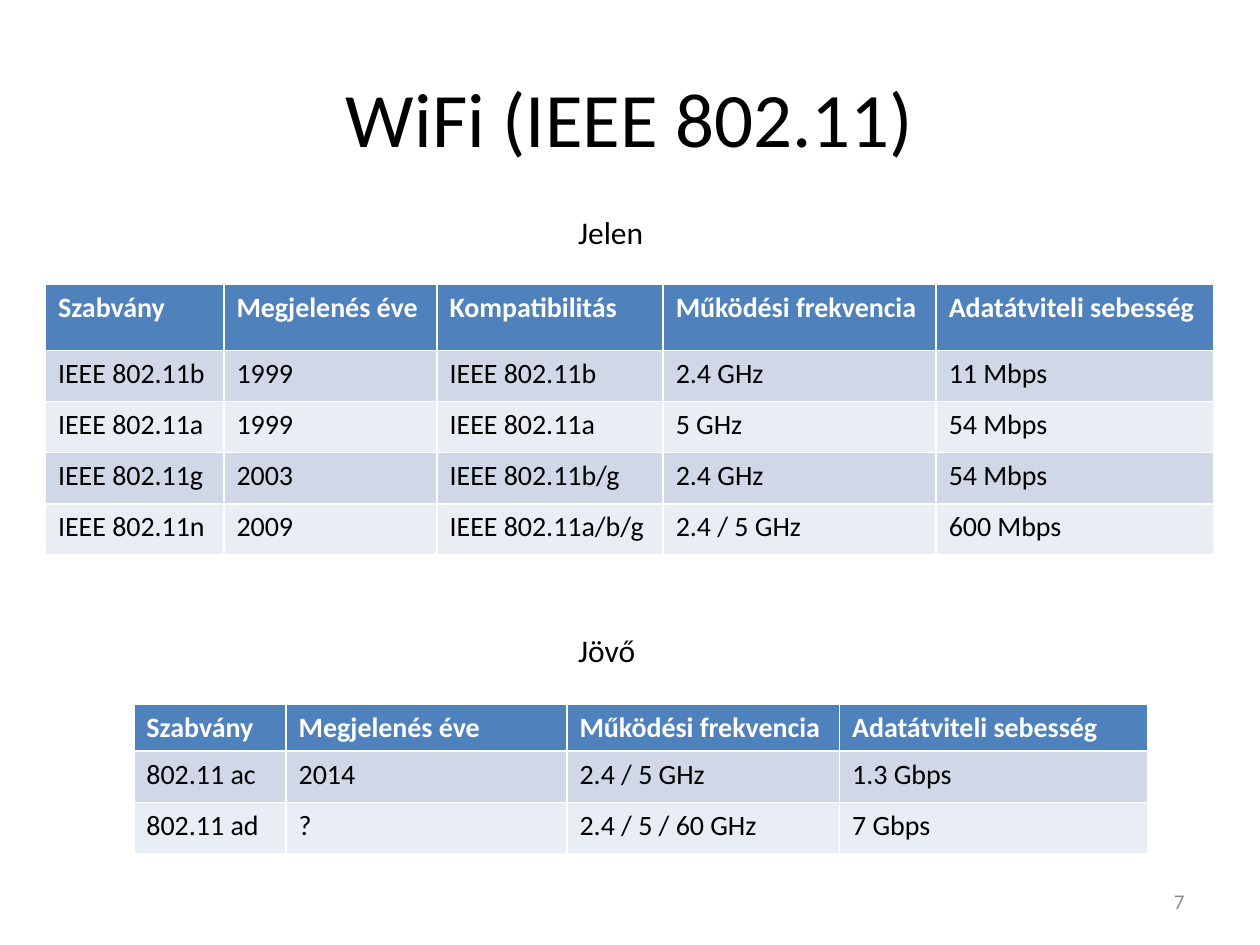
from pptx import Presentation
from pptx.dml.color import RGBColor
from pptx.enum.text import MSO_ANCHOR, PP_ALIGN
from pptx.util import Pt

BLACK = RGBColor(0x00, 0x00, 0x00)
WHITE = RGBColor(0xFF, 0xFF, 0xFF)
GRAY = RGBColor(0x8C, 0x8C, 0x8C)
BLUE = RGBColor(0x4F, 0x81, 0xBD)
BANDS = [RGBColor(0xE9, 0xED, 0xF4), RGBColor(0xD0, 0xD8, 0xE8)]


def style(para, size, color, bold=False):
    font = para.font
    font.name = "Calibri"
    font.size = Pt(size)
    font.color.rgb = color
    font.bold = bold


deck = Presentation()
deck.slide_width = Pt(720)
deck.slide_height = Pt(540)
slide = deck.slides.add_slide(deck.slide_layouts[6])

present = [
    ["Szabvány", "Megjelenés éve", "Kompatibilitás", "Működési frekvencia", "Adatátviteli sebesség"],
    ["IEEE 802.11b", "1999", "IEEE 802.11b", "2.4 GHz", "11 Mbps"],
    ["IEEE 802.11a", "1999", "IEEE 802.11a", "5 GHz", "54 Mbps"],
    ["IEEE 802.11g", "2003", "IEEE 802.11b/g", "2.4 GHz", "54 Mbps"],
    ["IEEE 802.11n", "2009", "IEEE 802.11a/b/g", "2.4 / 5 GHz", "600 Mbps"],
]
future = [
    ["Szabvány", "Megjelenés éve", "Működési frekvencia", "Adatátviteli sebesség"],
    ["802.11 ac", "2014", "2.4 / 5 GHz", "1.3 Gbps"],
    ["802.11 ad", "?", "2.4 / 5 / 60 GHz", "7 Gbps"],
]
tables = [
    (future, 76.5, 402.5, [87, 160.5, 155.75, 176.4], 26),
    (present, 26, 162.3, [102, 121.75, 129.25, 156, 158.4], 38),
]
for data, left, top, widths, head in tables:
    heights = [head] + [29.2] * (len(data) - 1)
    grid = slide.shapes.add_table(
        len(data), len(widths), Pt(left), Pt(top), Pt(sum(widths)), Pt(sum(heights))
    ).table
    for col, width in zip(grid.columns, widths):
        col.width = Pt(width)
    for r, (row, height) in enumerate(zip(data, heights)):
        grid.rows[r].height = Pt(height)
        for c, text in enumerate(row):
            cell = grid.cell(r, c)
            cell.text = text
            cell.fill.solid()
            cell.fill.fore_color.rgb = BANDS[r % 2] if r else BLUE
            style(cell.text_frame.paragraphs[0], 16, BLACK if r else WHITE, r == 0)

TOP, MIDDLE = MSO_ANCHOR.TOP, MSO_ANCHOR.MIDDLE
LEFT, CENTER, RIGHT = PP_ALIGN.LEFT, PP_ALIGN.CENTER, PP_ALIGN.RIGHT
labels = [
    ("WiFi (IEEE 802.11)", 36, 21.6, 648, 90, 44, BLACK, CENTER, MIDDLE),
    ("Jelen", 323.3, 118.1, 55.4, 29, 18, BLACK, LEFT, TOP),
    ("Jövő", 323.3, 357.1, 55.4, 29, 18, BLACK, LEFT, TOP),
    ("7", 516, 500.5, 168, 28.75, 12, GRAY, RIGHT, MIDDLE),
]
for text, left, top, width, height, size, color, align, anchor in labels:
    frame = slide.shapes.add_textbox(Pt(left), Pt(top), Pt(width), Pt(height)).text_frame
    frame.word_wrap = True
    frame.vertical_anchor = anchor
    para = frame.paragraphs[0]
    para.text = text
    para.alignment = align
    style(para, size, color)

deck.save("out.pptx")
